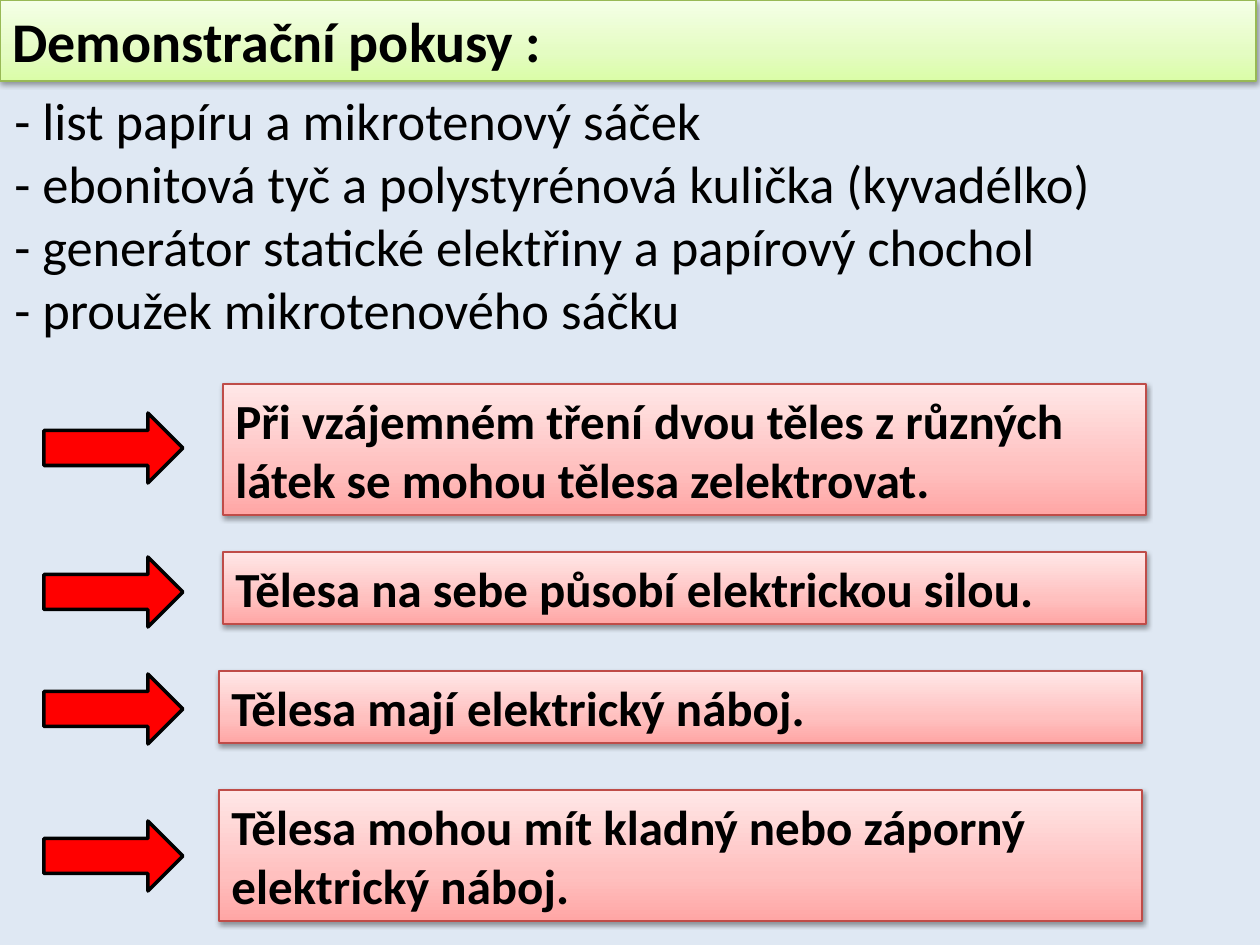
from dataclasses import dataclass

from pptx import Presentation
from pptx.dml.color import RGBColor
from pptx.enum.shapes import MSO_SHAPE as Shape
from pptx.enum.text import MSO_ANCHOR as Anchor, MSO_AUTO_SIZE as AutoSize, PP_ALIGN as Align
from pptx.oxml import parse_xml
from pptx.oxml.ns import nsdecls, qn
from pptx.util import Emu, Pt

EMU_PER_PX = 914400 / 126


@dataclass(frozen=True)
class Palette:
    stops: tuple[tuple[int, str], ...]
    line: str


@dataclass(frozen=True)
class Theme:
    font: str = "Calibri"
    background: str = "DFE8F3"
    ink: str = "000000"
    arrow: str = "FF0000"
    title_size: int = 32
    list_size: int = 30
    box_size: int = 28
    box_line: float = 0.75
    arrow_line: float = 2
    green: Palette = Palette(((0, "DAFDA7"), (35, "E4FCC2"), (100, "F5FFE7")), "98B955")
    red: Palette = Palette(((0, "FFA6A5"), (35, "FFC0BF"), (100, "FFE7E7")), "BF4C48")


@dataclass(frozen=True)
class Box:
    x: int
    y: int
    w: int
    h: int


@dataclass(frozen=True)
class Conclusion:
    text: str
    box: Box
    arrow: Box


THEME = Theme()
TITLE = "Demonstrační pokusy :"
EXPERIMENTS = (
    "- list papíru a mikrotenový sáček",
    "- ebonitová tyč a polystyrénová kulička (kyvadélko)",
    "- generátor statické elektřiny a papírový chochol",
    "- proužek mikrotenového sáčku",
)
BOX_W, ONE_LINE, TWO_LINES = 923, 72, 131
ARROW_X, ARROW_W, ARROW_H = 44, 139, 70


def conclusion(text: str, x: int, y: int, h: int, arrow_y: int) -> Conclusion:
    return Conclusion(text, Box(x, y, BOX_W, h), Box(ARROW_X, arrow_y, ARROW_W, ARROW_H))


CONCLUSIONS = (
    conclusion("Při vzájemném tření dvou těles z různých látek se mohou tělesa zelektrovat.",
               223, 384, TWO_LINES, 413),
    conclusion("Tělesa na sebe působí elektrickou silou.", 223, 552, ONE_LINE, 557),
    conclusion("Tělesa mají elektrický náboj.", 219, 671, ONE_LINE, 674),
    conclusion("Tělesa mohou mít kladný nebo záporný elektrický náboj.",
               219, 790, TWO_LINES, 821),
)


def px(n: int) -> Emu:
    return Emu(round(n * EMU_PER_PX))


def place(box: Box) -> tuple[Emu, Emu, Emu, Emu]:
    return px(box.x), px(box.y), px(box.w), px(box.h)


def rgb(color: str) -> RGBColor:
    return RGBColor.from_string(color)


def write(sp, text: str, size: int, bold: bool = False) -> None:
    tf = sp.text_frame
    tf.text = text
    tf.word_wrap = True
    tf.auto_size = AutoSize.SHAPE_TO_FIT_TEXT
    tf.vertical_anchor = Anchor.TOP
    for p in tf.paragraphs:
        p.alignment = Align.LEFT
        for r in p.runs:
            r.font.name = THEME.font
            r.font.size = Pt(size)
            r.font.bold = bold
            r.font.color.rgb = rgb(THEME.ink)


def add_panel(s, box: Box, text: str, size: int, palette: Palette) -> None:
    sp = s.shapes.add_shape(Shape.RECTANGLE, *place(box))
    sp.line.color.rgb = rgb(palette.line)
    sp.line.width = Pt(THEME.box_line)
    sp.fill.gradient()
    sp.shadow.inherit = False
    props = sp._element.spPr
    stops = "".join(
        f'<a:gs pos="{pos * 1000}"><a:srgbClr val="{color}"/></a:gs>'
        for pos, color in palette.stops
    )
    props.replace(props.find(qn("a:gradFill")), parse_xml(
        f'<a:gradFill {nsdecls("a")} rotWithShape="1"><a:gsLst>{stops}</a:gsLst>'
        '<a:lin ang="16200000" scaled="0"/></a:gradFill>'
    ))
    props.find(qn("a:effectLst")).append(parse_xml(
        f'<a:outerShdw {nsdecls("a")} blurRad="40000" dist="20000" dir="5400000" '
        'rotWithShape="0"><a:srgbClr val="000000"><a:alpha val="38000"/></a:srgbClr>'
        '</a:outerShdw>'
    ))
    write(sp, text, size, bold=True)


def add_arrow(s, box: Box) -> None:
    sp = s.shapes.add_shape(Shape.RIGHT_ARROW, *place(box))
    sp.shadow.inherit = False
    sp.fill.solid()
    sp.fill.fore_color.rgb = rgb(THEME.arrow)
    sp.line.color.rgb = rgb(THEME.ink)
    sp.line.width = Pt(THEME.arrow_line)


def main() -> None:
    prs = Presentation()
    prs.slide_width, prs.slide_height = px(1260), px(945)
    s = prs.slides.add_slide(prs.slide_layouts[6])
    s.background.fill.solid()
    s.background.fill.fore_color.rgb = rgb(THEME.background)

    experiments = s.shapes.add_textbox(*place(Box(2, 82, 1260, 267)))
    write(experiments, "\n".join(EXPERIMENTS), THEME.list_size)
    add_panel(s, Box(0, 0, 1256, 81), TITLE, THEME.title_size, THEME.green)
    for item in CONCLUSIONS:
        add_panel(s, item.box, item.text, THEME.box_size, THEME.red)
        add_arrow(s, item.arrow)
    prs.save("out.pptx")


if __name__ == "__main__":
    main()
